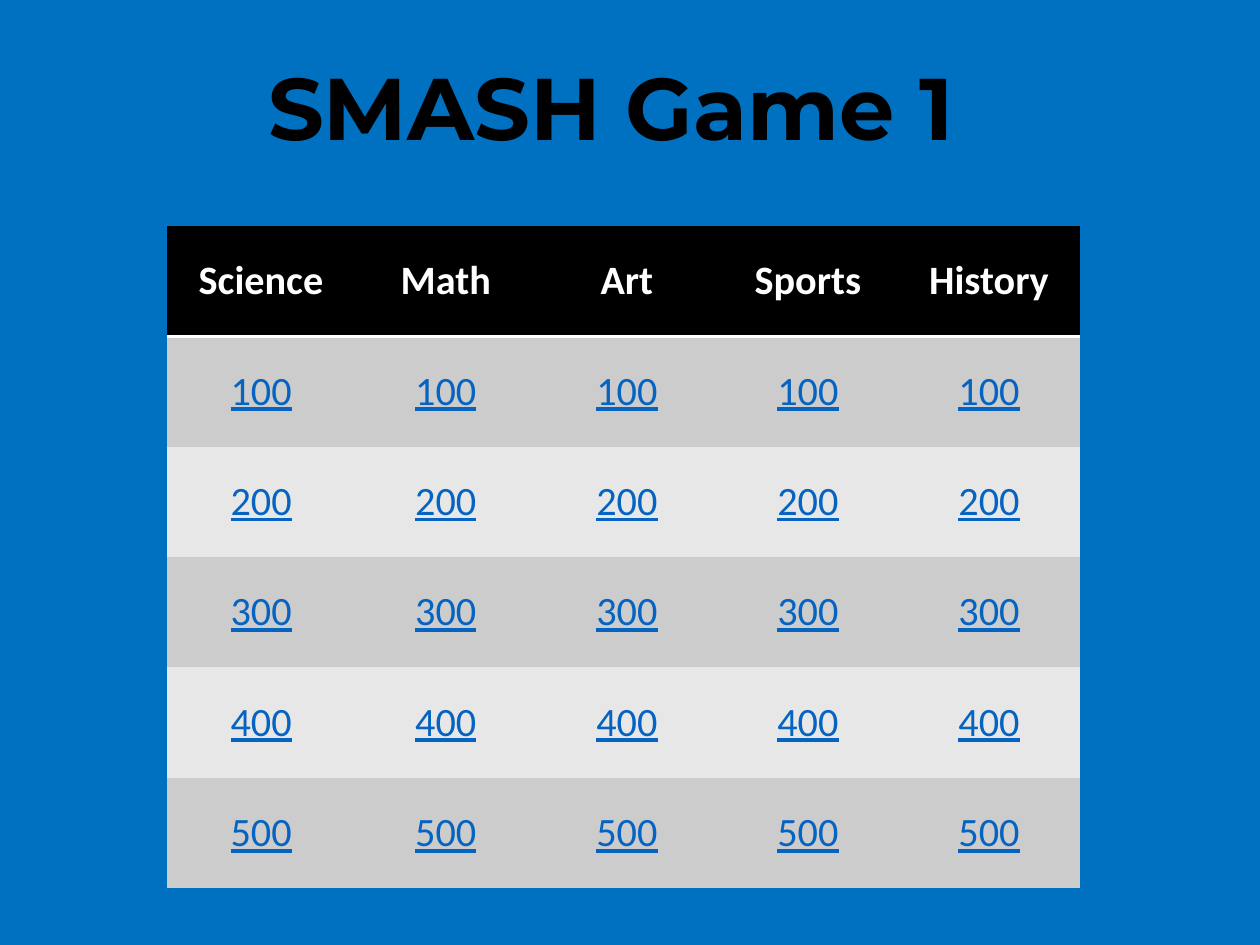
from pptx import Presentation
from pptx.dml.color import RGBColor as Rgb
from pptx.enum.text import MSO_ANCHOR as Anchor, MSO_AUTO_SIZE as Fit, PP_ALIGN as Align
from pptx.oxml import parse_xml as to_xml
from pptx.oxml.ns import nsdecls
from pptx.util import Pt

HUES = {"back": "0070C0", "black": "000000", "white": "FFFFFF",
        "dark": "CCCCCC", "light": "E7E7E7", "link": "0563C1"}
TITLE = {"name": "Montserrat", "size": Pt(50), "bold": True}
HEAD = {"name": "Calibri", "size": Pt(23), "bold": True}
SCORE = {"name": "Calibri", "size": Pt(23), "bold": False, "underline": True}
TOPICS = ["Science", "Math", "Art", "Sports", "History"]
SCORES = [100, 200, 300, 400, 500]
PLAIN = "{2D5ABB26-0587-4C30-8999-92F81FD0307C}"


def put(para, text, style, hue):
    """Write one centred run of styled text."""
    para.alignment = Align.CENTER
    run = para.add_run()
    run.text = text
    for key, value in style.items():
        setattr(run.font, key, value)
    run.font.color.rgb = Rgb.from_string(HUES[hue])


def rule(cell, hue, width):
    """Draw a line along the bottom of a cell."""
    cell._tc.get_or_add_tcPr().append(to_xml(
        f'<a:lnB {nsdecls("a")} w="{Pt(width)}"><a:solidFill>'
        f'<a:srgbClr val="{HUES[hue]}"/></a:solidFill></a:lnB>'))


def add_title(slide, left, top, width, height):
    """Place the game title in the given box."""
    title = slide.shapes.title
    title.left, title.top, title.width, title.height = map(Pt, (left, top, width, height))
    frame = title.text_frame
    frame.auto_size = Fit.NONE
    frame.word_wrap = True
    frame.vertical_anchor = Anchor.MIDDLE
    frame.paragraphs[0].line_spacing = 0.9
    put(frame.paragraphs[0], "SMASH Game 1", TITLE, "black")


def add_board(slide, left, top, width, height):
    """Place the table of topics and scores in the given box."""
    rows = [TOPICS] + [[str(score)] * len(TOPICS) for score in SCORES]
    frame = slide.shapes.add_table(len(rows), len(TOPICS), *map(Pt, (left, top, width, height)))
    table = frame.table
    table._tbl.tblPr.find("{*}tableStyleId").text = PLAIN
    first = 107.5
    rest = (width - first) / (len(TOPICS) - 1)
    for c, col in enumerate(table.columns):
        col.width = Pt(rest if c else first)
    for r, row in enumerate(rows):
        table.rows[r].height = Pt(height / len(rows))
        fill = "black" if r == 0 else "dark" if r % 2 else "light"
        style, hue = (SCORE, "link") if r else (HEAD, "white")
        for c, text in enumerate(row):
            cell = table.cell(r, c)
            cell.vertical_anchor = Anchor.MIDDLE
            cell.margin_left = cell.margin_right = Pt(5.76)
            cell.margin_top = cell.margin_bottom = Pt(2.88)
            if r == 0:
                rule(cell, "white", 2)
            cell.fill.solid()
            cell.fill.fore_color.rgb = Rgb.from_string(HUES[fill])
            put(cell.text_frame.paragraphs[0], text, style, hue)


def main():
    """Build and save the game board slide."""
    deck = Presentation()
    deck.slide_width, deck.slide_height = Pt(720), Pt(540)
    slide = deck.slides.add_slide(deck.slide_layouts[5])
    slide.background.fill.solid()
    slide.background.fill.fore_color.rgb = Rgb.from_string(HUES["back"])
    add_title(slide, 113.5, 42, 471.5, 44)
    add_board(slide, 95.5, 129, 521.5, 378.5)
    deck.save("out.pptx")


if __name__ == "__main__":
    main()
